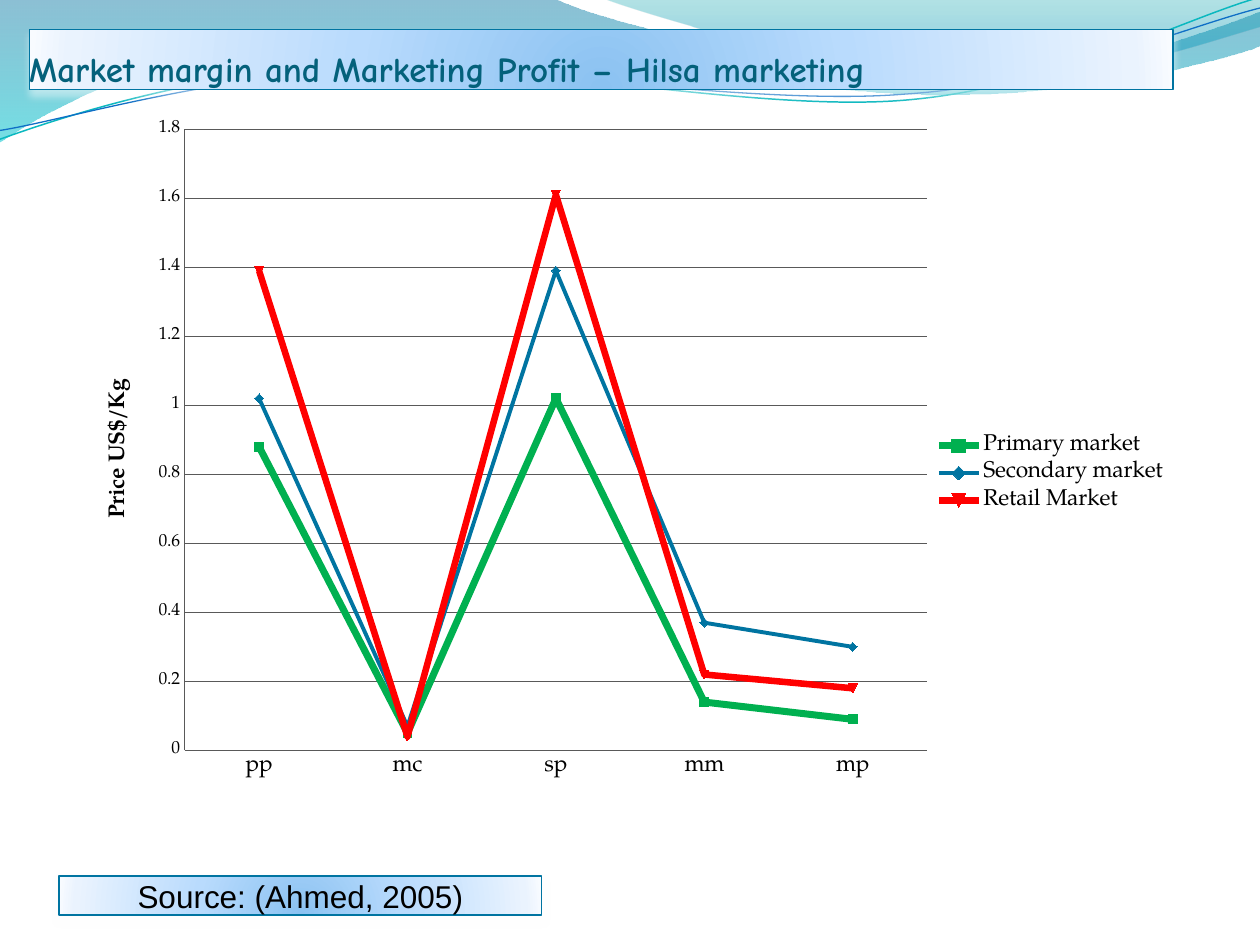
from dataclasses import dataclass
from math import cos, radians, sin

from lxml import etree
from pptx import Presentation
from pptx.chart.data import CategoryChartData
from pptx.dml.color import RGBColor
from pptx.enum.chart import XL_CHART_TYPE, XL_LEGEND_POSITION, XL_TICK_MARK
from pptx.enum.shapes import MSO_SHAPE
from pptx.enum.text import MSO_ANCHOR, PP_ALIGN
from pptx.oxml.ns import qn
from pptx.util import Cm, Pt

RECTANGLE = MSO_SHAPE.RECTANGLE
LINE_MARKERS = XL_CHART_TYPE.LINE_MARKERS
LEGEND_RIGHT = XL_LEGEND_POSITION.RIGHT
NO_TICK = XL_TICK_MARK.NONE
BOTTOM, MIDDLE = MSO_ANCHOR.BOTTOM, MSO_ANCHOR.MIDDLE
LEFT, CENTER = PP_ALIGN.LEFT, PP_ALIGN.CENTER
UNITS = 100
WAVE_UNIT = Cm(2.54) / UNITS


@dataclass(frozen=True)
class Theme:
    """Colours, fonts and type sizes of the slide."""
    title: str = "04617B"
    text: str = "000000"
    border: str = "0074A1"
    grid: str = "595959"
    shadow: str = "FFFFFF"
    primary: str = "00B050"
    secondary: str = "0074A1"
    retail: str = "FF0000"
    upper_curve: str = "0AB8BF"
    lower_curve: str = "0F6FC6"
    title_font: str = "Comic Neue"
    source_font: str = "Arial"
    chart_font: str = "TeX Gyre Pagella"
    title_size: int = 20
    source_size: int = 18
    label_size: int = 13
    tick_size: int = 10
    panel: tuple = ((0, "8BC2F1", 100), (43, "B9DBFD", 100), (93, "EAF3FE", 100), (100, "F8FBFF", 100))
    left_wave: tuple = ((0, "0074A1", 45), (100, "00C6CF", 55))
    right_wave: tuple = ((0, "00A1A9", 30), (80, "008BBF", 45))


def apply_format(target, values):
    """Set every attribute named in values on the target."""
    for name, value in values.items():
        setattr(target, name, value)


def add_element(parent, tag, **attributes):
    """Append a child element with the given attributes."""
    return etree.SubElement(parent, qn(tag), {key: str(value) for key, value in attributes.items()})


def add_colour(parent, colour, opacity):
    """Append a colour with an opacity in percent."""
    add_element(add_element(parent, "a:srgbClr", val=colour), "a:alpha", val=opacity * 1000)


def turn_back(points, centre, degrees):
    """Undo a rotation of the points about the centre."""
    cosine, sine = cos(radians(degrees)), sin(radians(degrees))
    offsets = [(x - centre[0], y - centre[1]) for x, y in points]
    return [(centre[0] + x * cosine + y * sine, centre[1] - x * sine + y * cosine) for x, y in offsets]


class SlideBuilder:
    """Draws styled elements on the current slide."""

    def __init__(self, slide, theme):
        """Keep the slide and its theme."""
        self.slide = slide
        self.theme = theme

    def set_font(self, font, colour, **values):
        """Apply font values and a colour."""
        apply_format(font, values)
        font.color.rgb = RGBColor.from_string(colour)

    def set_line(self, line, colour, width):
        """Apply a solid line colour and width in points."""
        line.color.rgb = RGBColor.from_string(colour)
        line.width = Pt(width)

    def set_gradient(self, shape, stops, radial=False):
        """Fill a shape with a vertical or radial gradient."""
        shape.fill.gradient()
        gradient = shape._element.spPr.find(qn("a:gradFill"))
        for child in list(gradient):
            gradient.remove(child)
        stop_list = add_element(gradient, "a:gsLst")
        for position, colour, opacity in stops:
            add_colour(add_element(stop_list, "a:gs", pos=position * 1000), colour, opacity)
        if radial:
            circle = add_element(gradient, "a:path", path="circle")
            add_element(circle, "a:fillToRect", l=50000, t=130000, r=50000, b=-30000)
        else:
            add_element(gradient, "a:lin", ang=5400000, scaled=1)

    def add_outline(self, points, lines=(), closed=False):
        """Add a freeform of cubic curves, with straight lines to the listed points."""
        scaled = [(round(x * UNITS), round(y * UNITS)) for x, y in points]
        builder = self.slide.shapes.build_freeform(*scaled[0], scale=WAVE_UNIT)
        builder.add_line_segments(scaled[1:], close=closed)
        shape = builder.convert_to_shape()
        shape.shadow.inherit = False
        steps = list(shape._element.iter(qn("a:lnTo")))
        curved = [step for index, step in enumerate(steps, 1) if index not in lines]
        for first in range(0, len(curved), 3):
            curve = etree.Element(qn("a:cubicBezTo"))
            curved[first].addprevious(curve)
            for step in curved[first:first + 3]:
                curve.append(step[0])
                step.getparent().remove(step)
        return shape

    def add_wave(self, points, lines, stops):
        """Add a filled wave."""
        shape = self.add_outline(points, lines, closed=True)
        self.set_gradient(shape, stops)
        shape.line.fill.background()

    def add_curve(self, points, centre, colour, width, rotation=357.3):
        """Add a thin rotated curve."""
        shape = self.add_outline(turn_back(points, centre, rotation))
        shape.fill.background()
        shape.rotation = rotation
        self.set_line(shape.line, colour, width)

    def add_panel(self, box, text, frame_format, alignment, colour, **font):
        """Add a bordered gradient panel with text."""
        shape = self.slide.shapes.add_shape(RECTANGLE, *map(Cm, box))
        self.set_gradient(shape, self.theme.panel, radial=True)
        self.set_line(shape.line, self.theme.border, 0.75)
        shape.shadow.inherit = False
        effects = shape._element.spPr.find(qn("a:effectLst"))
        shadow = add_element(effects, "a:outerShdw", blurRad=Pt(4.5), dist=Pt(3), dir=5400000, rotWithShape=0)
        add_colour(shadow, self.theme.shadow, 48)
        apply_format(shape.text_frame, {"word_wrap": True, **frame_format})
        paragraph = shape.text_frame.paragraphs[0]
        paragraph.alignment = alignment
        run = paragraph.add_run()
        run.text = text
        self.set_font(run.font, colour, **font)

    def add_line_chart(self, box, categories, series_rows, axis_title, plot):
        """Add a line chart with a legend and a titled value axis."""
        theme = self.theme
        data = CategoryChartData()
        data.categories = categories
        for name, values, _, _ in series_rows:
            data.add_series(name, values)
        chart = self.slide.shapes.add_chart(LINE_MARKERS, *map(Cm, box), data).chart
        apply_format(chart, {"has_title": False, "has_legend": True})
        apply_format(chart.legend, {"position": LEGEND_RIGHT, "include_in_layout": False})
        label = {"name": theme.chart_font, "size": Pt(theme.label_size)}
        tick = {**label, "size": Pt(theme.tick_size)}
        self.set_font(chart.font, theme.text, **tick)
        self.set_font(chart.legend.font, theme.text, **label)
        for axis, font in ((chart.category_axis, label), (chart.value_axis, tick)):
            apply_format(axis, {"major_tick_mark": NO_TICK, "minor_tick_mark": NO_TICK})
            self.set_font(axis.tick_labels.font, theme.text, **font)
            self.set_line(axis.format.line, theme.grid, 0.5)
        axis = chart.value_axis
        apply_format(axis, {"minimum_scale": 0, "maximum_scale": 1.8, "major_unit": 0.2})
        self.set_line(axis.major_gridlines.format.line, theme.grid, 0.5)
        axis.axis_title.text_frame.text = axis_title
        run = axis.axis_title.text_frame.paragraphs[0].runs[0]
        self.set_font(run.font, theme.text, bold=True, **label)
        chart.plots[0].vary_by_categories = False
        for series, (_, _, colour, width) in zip(chart.plots[0].series, series_rows):
            series.smooth = False
            self.set_line(series.format.line, colour, width)
            series.marker.size = 5
            series.marker.format.fill.solid()
            series.marker.format.fill.fore_color.rgb = RGBColor.from_string(colour)
            self.set_line(series.marker.format.line, colour, 0.75)
        self.place_plot(chart, plot)

    def place_plot(self, chart, plot):
        """Fix the inner plot area in percent of the chart."""
        area = chart._chartSpace.chart.plotArea
        for old in area.findall(qn("c:layout")):
            area.remove(old)
        layout = etree.Element(qn("c:layout"))
        area.insert(0, layout)
        manual = add_element(layout, "c:manualLayout")
        shares = {name: percent / 100 for name, percent in zip("xywh", plot)}
        for name, value in {"layoutTarget": "inner", "xMode": "edge", "yMode": "edge", **shares}.items():
            add_element(manual, f"c:{name}", val=value)


def main():
    """Build and save the slide."""
    theme = Theme()
    presentation = Presentation()
    apply_format(presentation, {"slide_width": Cm(25.4), "slide_height": Cm(19.05)})
    builder = SlideBuilder(presentation.slides.add_slide(presentation.slide_layouts[6]), theme)
    builder.add_wave((
        (0, 0), (4.4, -0.01), (4.76, 0.17), (6.64, 0.63), (7.58, 0.63), (8.53, 0.63), (9.58, 0.26), (10, 0.09),
        (10.01, 0.36), (9.83, 0.44), (8.7, 0.76), (7.46, 0.75), (6.22, 0.75), (3.82, 0.28), (2.57, 0.34),
        (1.29, 0.36), (0.46, 0.83), (-0.01, 1.13)), (1, 8), theme.left_wave)
    builder.add_wave((
        (4.79, -0.01), (5.09, 0.11), (6.82, 0.62), (7.69, 0.65), (8.56, 0.69), (9.61, 0.32), (10, 0.21),
        (10, 0)), (7,), theme.right_wave)
    builder.add_curve((
        (0, 1.11), (0.48, 0.93), (1.58, 0.57), (2.77, 0.52), (3.95, 0.47), (5.93, 0.89), (7.13, 0.8),
        (8.33, 0.71), (9.38, 0.15), (9.98, -0.02)), (4.99, 0.58), theme.upper_curve, 0.85)
    builder.add_curve((
        (0, 1.04), (0.47, 0.96), (1.64, 0.61), (2.83, 0.56), (4.03, 0.51), (5.97, 0.84), (7.17, 0.75),
        (8.36, 0.67), (9.41, 0.21), (10, 0.06)), (5, 0.59), theme.lower_curve, 0.75)
    title_frame = {"vertical_anchor": BOTTOM, "margin_left": 0, "margin_right": 0, "margin_bottom": 0}
    builder.add_panel((0.59, 0.59, 23.06, 1.22), "Market margin and Marketing Profit – Hilsa marketing", title_frame,
                      LEFT, theme.title, name=theme.title_font, size=Pt(theme.title_size), bold=True)
    builder.add_line_chart((1.57, 2.39, 22.23, 14.3), ("pp", "mc", "sp", "mm", "mp"), (
        ("Primary market", (0.88, 0.05, 1.02, 0.14, 0.09), theme.primary, 4),
        ("Secondary market", (1.02, 0.07, 1.39, 0.37, 0.3), theme.secondary, 2.25),
        ("Retail Market", (1.39, 0.04, 1.61, 0.22, 0.18), theme.retail, 3.75),
    ), "Price US$/Kg", (9.7, 1.5, 67.3, 87.6))
    builder.add_panel((1.19, 17.66, 9.73, 0.79), "Source: (Ahmed, 2005)", {"vertical_anchor": MIDDLE},
                      CENTER, theme.text, name=theme.source_font, size=Pt(theme.source_size))
    presentation.save("out.pptx")


if __name__ == "__main__":
    main()
